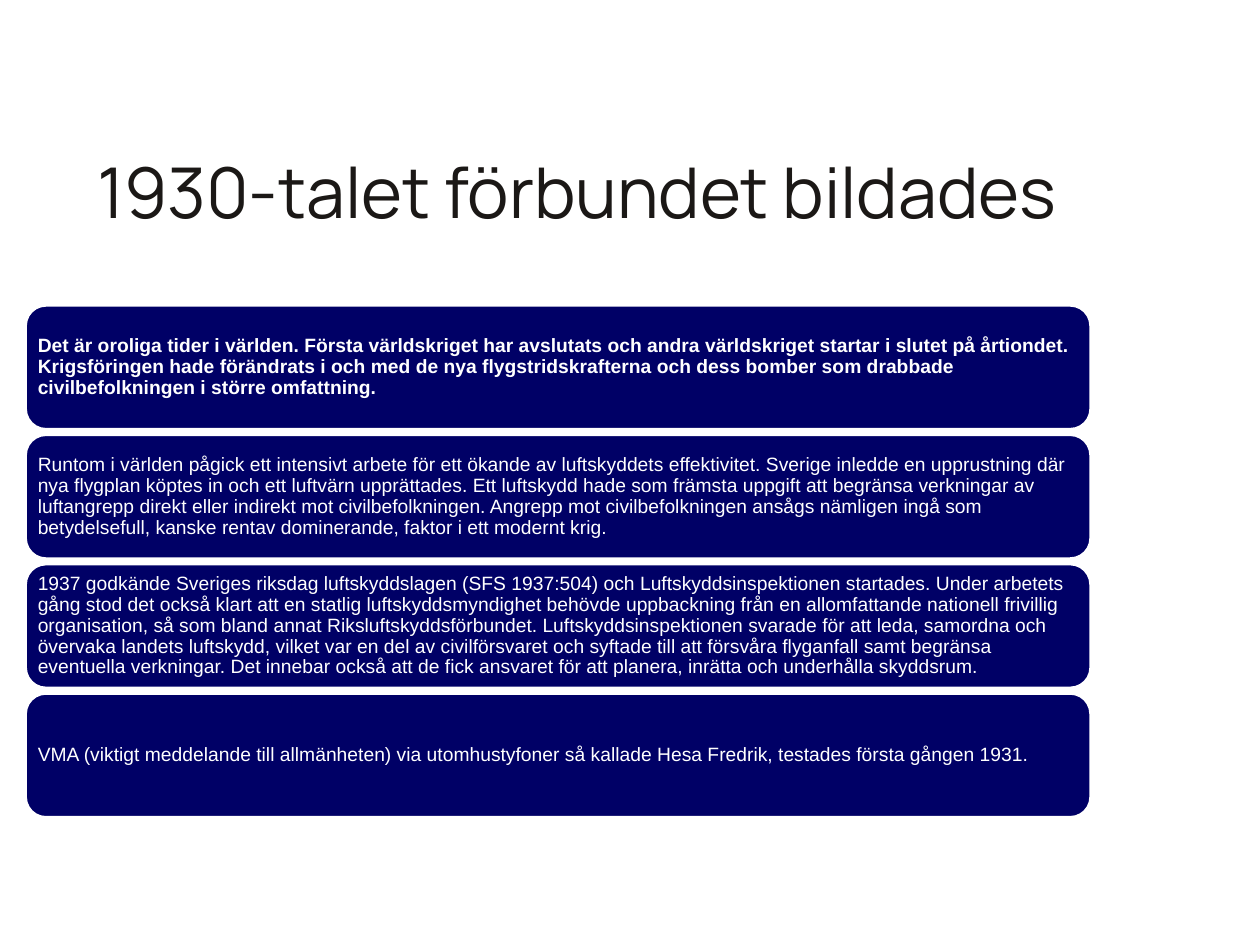
from pptx import Presentation
from pptx.dml.color import RGBColor
from pptx.enum.shapes import MSO_SHAPE
from pptx.enum.text import MSO_ANCHOR, MSO_AUTO_SIZE, PP_ALIGN
from pptx.util import Inches, Pt

COLORS = {"navy": "000066", "white": "FFFFFF", "ink": "1B1816"}

TITLE = "1930-talet förbundet bildades"
EVENTS = [
    "Det är oroliga tider i världen. Första världskriget har avslutats och andra "
    "världskriget startar i slutet på årtiondet. Krigsföringen hade förändrats i och "
    "med de nya flygstridskrafterna och dess bomber som drabbade civilbefolkningen i "
    "större omfattning.",
    "Runtom i världen pågick ett intensivt arbete för ett ökande av luftskyddets "
    "effektivitet. Sverige inledde en upprustning där nya flygplan köptes in och ett "
    "luftvärn upprättades. Ett luftskydd hade som främsta uppgift att begränsa "
    "verkningar av luftangrepp direkt eller indirekt mot civilbefolkningen. Angrepp "
    "mot civilbefolkningen ansågs nämligen ingå som betydelsefull, kanske rentav "
    "dominerande, faktor i ett modernt krig.",
    "1937 godkände Sveriges riksdag luftskyddslagen (SFS 1937:504) och "
    "Luftskyddsinspektionen startades. Under arbetets gång stod det också klart att en "
    "statlig luftskyddsmyndighet behövde uppbackning från en allomfattande nationell "
    "frivillig organisation, så som bland annat Riksluftskyddsförbundet. "
    "Luftskyddsinspektionen svarade för att leda, samordna och övervaka landets "
    "luftskydd, vilket var en del av civilförsvaret och syftade till att försvåra "
    "flyganfall samt begränsa eventuella verkningar. Det innebar också att de fick "
    "ansvaret för att planera, inrätta och underhålla skyddsrum.",
    "VMA (viktigt meddelande till allmänheten) via utomhustyfoner så kallade Hesa "
    "Fredrik, testades första gången 1931.",
]


def color(name):
    return RGBColor.from_string(COLORS[name])


def set_text(box, text, font_name, size, color_name, spacing, inset, anchor):
    frame = box.text_frame
    frame.text = text
    frame.word_wrap = True
    frame.auto_size = MSO_AUTO_SIZE.NONE
    frame.vertical_anchor = anchor
    frame.margin_left = frame.margin_right = inset
    frame.margin_top = frame.margin_bottom = inset
    para = frame.paragraphs[0]
    para.alignment = PP_ALIGN.LEFT
    para.line_spacing = spacing
    para.font.name = font_name
    para.font.size = Pt(size)
    para.font.color.rgb = color(color_name)
    return para


def place_title(page, left, top, width, height):
    title = page.shapes.title
    title.left, title.top, title.width, title.height = left, top, width, height
    set_text(title, TITLE, "Manrope", 40, "ink", 0.94, 0, MSO_ANCHOR.TOP)


def place_event(group, text, bold, left, top, width, height):
    card = group.shapes.add_shape(MSO_SHAPE.ROUNDED_RECTANGLE, left, top, width, height)
    card.shadow.inherit = False
    card.fill.solid()
    card.fill.fore_color.rgb = color("navy")
    card.line.color.rgb = color("white")
    card.line.width = Pt(2)

    inset = Inches(0.05)
    box = group.shapes.add_textbox(
        left + inset, top + inset, width - 2 * inset, height - 2 * inset
    )
    para = set_text(box, text, "Arial", 11, "white", 0.9, inset, MSO_ANCHOR.MIDDLE)
    para.font.bold = bold


def place_events(page, left, top, width, height):
    group = page.shapes.add_group_shape()
    card_height = Inches(0.99)
    pitch = (height - card_height) // (len(EVENTS) - 1)
    for index, text in enumerate(EVENTS):
        place_event(
            group, text, index == 0, left, top + index * pitch, width, card_height
        )


def main():
    deck = Presentation()
    deck.slide_width, deck.slide_height = Inches(10), Inches(7.5)
    page = deck.slides.add_slide(deck.slide_layouts.get_by_name("Title Only"))
    place_title(page, Inches(0.77), Inches(1.23), Inches(8.46), Inches(0.63))
    place_events(page, Inches(0.2), Inches(2.42), Inches(8.46), Inches(4.07))
    deck.save("out.pptx")


if __name__ == "__main__":
    main()
